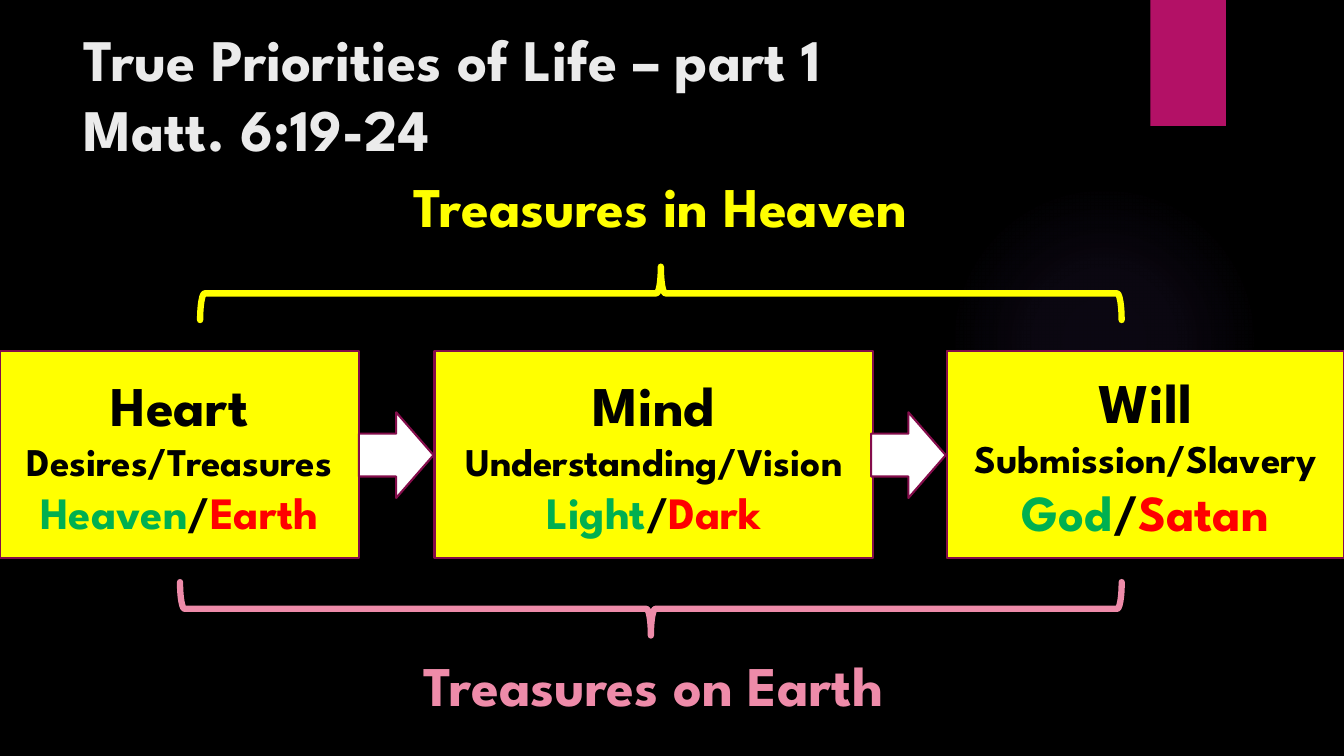
"""Build the slide on the true priorities of life: heart, mind and will between two treasures."""
import pptx
import pptx.dml.color
import pptx.enum.shapes
import pptx.enum.text
import pptx.oxml
import pptx.oxml.ns
import pptx.util

Inches = pptx.util.Inches
Pt = pptx.util.Pt
SHAPE = pptx.enum.shapes.MSO_SHAPE
ALIGN = pptx.enum.text.PP_ALIGN
ANCHOR = pptx.enum.text.MSO_ANCHOR
FIT = pptx.enum.text.MSO_AUTO_SIZE

COLORS = {
    "black": "000000", "white": "FFFFFF", "title": "EBEBEB", "yellow": "FFFF00",
    "pink": "EE8BA9", "magenta": "B31166", "plum": "840D4B", "green": "00B050",
    "red": "FF0000", "violet": "9B6BF2",
}
FONT = {"name": "League Spartan", "bold": True}


def rgb(name):
    return pptx.dml.color.RGBColor.from_string(COLORS[name])


def write_text(shape, paragraphs, alignment, frame_format):
    frame = shape.text_frame
    for attribute, value in {"word_wrap": True, **frame_format}.items():
        setattr(frame, attribute, value)
    for index, runs in enumerate(paragraphs):
        paragraph = frame.add_paragraph() if index else frame.paragraphs[0]
        paragraph.alignment = alignment
        for text, size, color in runs:
            if text == "\n":
                paragraph.add_line_break()
                continue
            run = paragraph.add_run()
            run.text = text
            for attribute, value in {**FONT, "size": Pt(size)}.items():
                setattr(run.font, attribute, value)
            run.font.color.rgb = rgb(color)


presentation = pptx.Presentation()
presentation.slide_width = Inches(13.33)
presentation.slide_height = Inches(7.5)
slide = presentation.slides.add_slide(presentation.slide_layouts[6])
slide.background.fill.solid()
slide.background.fill.fore_color.rgb = rgb("black")

box_top, box_height = 3.48, 2.06
boxes = [
    (0, 3.56, "Heart", "Desires/Treasures", "Heaven", "Earth", 32),
    (4.31, 4.35, "Mind", "Understanding/Vision", "Light", "Dark", 32),
    (9.39, 3.94, "Will", "Submission/Slavery", "God", "Satan", 36),
]

glow = slide.shapes.add_shape(SHAPE.OVAL, Inches(9.41), Inches(1.83), Inches(3.08), Inches(3.08))
glow.shadow.inherit = False
glow.line.fill.background()
stops = "".join(
    f'<a:gs pos="{position * 1000}"><a:srgbClr val="{COLORS["violet"]}">'
    f'<a:alpha val="{opacity * 1000}"/></a:srgbClr></a:gs>'
    for position, opacity in [(0, 7), (36, 6), (69, 0)]
)
gradient = pptx.oxml.parse_xml(
    f'<a:gradFill {pptx.oxml.ns.nsdecls("a")}><a:gsLst>{stops}</a:gsLst><a:path path="circle">'
    '<a:fillToRect l="50000" t="50000" r="50000" b="50000"/></a:path></a:gradFill>'
)
glow.element.spPr.find(pptx.oxml.ns.qn("a:prstGeom")).addnext(gradient)

tab = slide.shapes.add_shape(SHAPE.RECTANGLE, Inches(11.41), 0, Inches(0.75), Inches(1.25))
tab.shadow.inherit = False
tab.fill.solid()
tab.fill.fore_color.rgb = rgb("magenta")
tab.line.fill.background()

title = slide.shapes.add_textbox(Inches(0.73), Inches(0.16), Inches(10.29), Inches(1.53))
title_runs = [(text, 42, "title") for text in ("True Priorities of Life – part 1", "\n", "Matt. 6:19-24")]
write_text(title, [title_runs], ALIGN.LEFT, {"vertical_anchor": ANCHOR.MIDDLE})

blocks = [(SHAPE.RECTANGLE, left, box_top, width, box_height, "yellow") for left, width, *_ in boxes]
blocks += [(SHAPE.RIGHT_ARROW, left - 0.75, 4.09, 0.74, 0.85, "white") for left, *_ in boxes[1:]]
block_shapes = []
for kind, left, top, width, height, color in blocks:
    shape = slide.shapes.add_shape(kind, Inches(left), Inches(top), Inches(width), Inches(height))
    shape.shadow.inherit = False
    shape.fill.solid()
    shape.fill.fore_color.rgb = rgb(color)
    shape.line.color.rgb = rgb("plum")
    shape.line.width = Pt(1.5)
    block_shapes.append(shape)

for shape, (_, _, name, aspect, good, bad, size) in zip(block_shapes, boxes):
    lines = [
        [(name, 40, "black")],
        [(aspect, 28, "black")],
        [(good, size, "green"), ("/", size, "black"), (bad, size, "red")],
    ]
    write_text(shape, lines, ALIGN.CENTER, {"vertical_anchor": ANCHOR.MIDDLE})

treasures = [
    ("Treasures on Earth", "pink", 1.91, 6.4, (6.19, 1.37, 9.34, 90)),
    ("Treasures in Heaven", "yellow", 1.98, 1.65, (6.29, -1.66, 9.14, 270)),
]
for text, color, label_left, label_top, (left, top, length, rotation) in treasures:
    brace = slide.shapes.add_shape(SHAPE.RIGHT_BRACE, Inches(left), Inches(top), Inches(0.53), Inches(length))
    brace.rotation = rotation
    brace.shadow.inherit = False
    brace.fill.background()
    brace.line.color.rgb = rgb(color)
    brace.line.width = Pt(4.5)
    brace.element.spPr.find(pptx.oxml.ns.qn("a:ln")).set("cap", "rnd")

    label = slide.shapes.add_textbox(Inches(label_left), Inches(label_top), Inches(9.14), Inches(0.77))
    write_text(label, [[(text, 40, color)]], ALIGN.CENTER, {"auto_size": FIT.SHAPE_TO_FIT_TEXT})

presentation.save("out.pptx")
